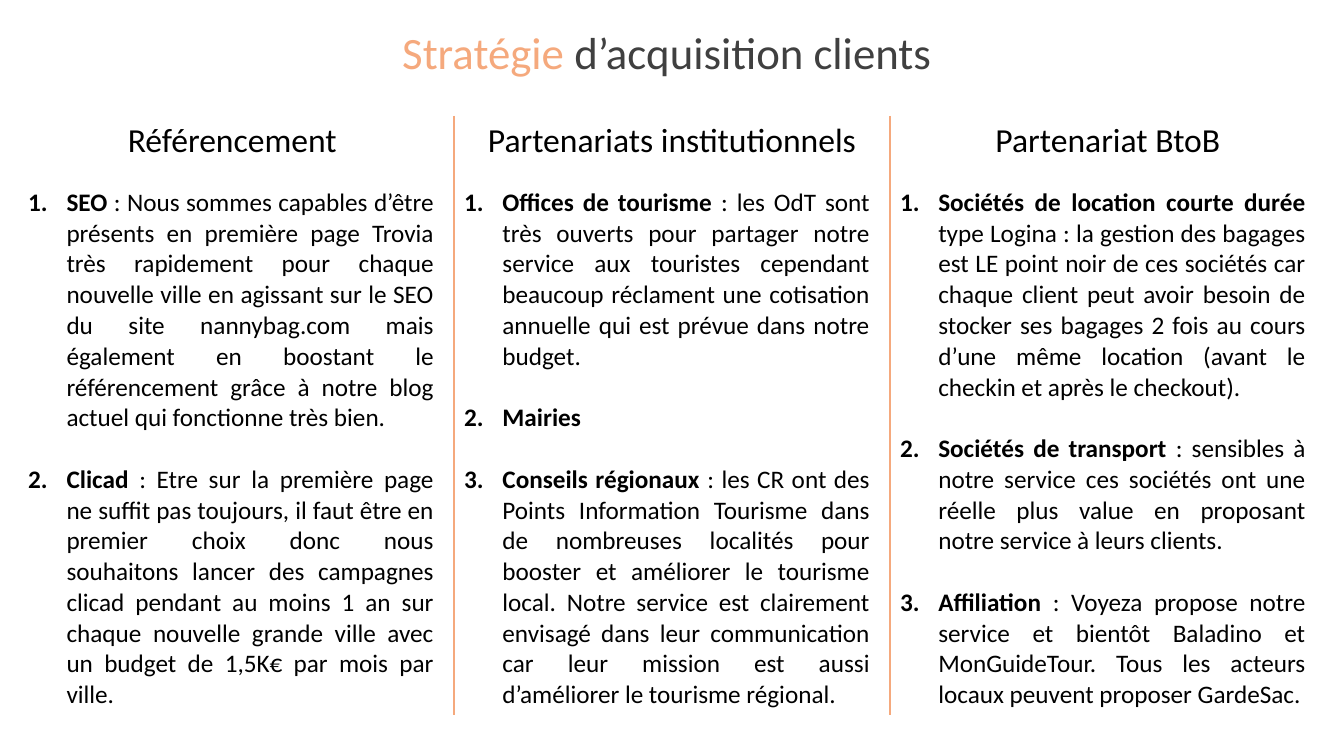
from lxml import etree
from pptx import Presentation
from pptx import util as u
from pptx.dml.color import RGBColor
from pptx.enum import text
from pptx.oxml import ns

PEACH = RGBColor(0xF5, 0xA9, 0x7D)
GREY = RGBColor(0x40, 0x40, 0x40)
BLACK = RGBColor(0, 0, 0)
PLAIN = "{2D5ABB26-0587-4C30-8999-92F81FD0307C}"

TITLE = [("Stratégie ", {"color": PEACH}), ("d’acquisition clients ", {"color": GREY})]
COLUMNS = [
    ("Référencement ", [
        ("SEO", " : Nous sommes capables d’être présents en première page Trovia très rapidement pour chaque nouvelle ville en agissant sur le SEO du site nannybag.com mais également en boostant le référencement grâce à notre blog actuel qui fonctionne très bien."),
        ("Clicad", " : Etre sur la première page ne suffit pas toujours, il faut être en premier choix donc nous souhaitons lancer des campagnes clicad pendant au moins 1 an sur chaque nouvelle grande ville avec un budget de 1,5K€ par mois par ville."),
    ]),
    ("Partenariats institutionnels", [
        ("Offices de tourisme ", ": les OdT sont très ouverts pour partager notre service aux touristes cependant beaucoup réclament une cotisation annuelle qui est prévue dans notre budget."),
        ("Mairies", ""),
        ("Conseils régionaux ", ": les CR ont des Points Information Tourisme dans de nombreuses localités pour booster et améliorer le tourisme local. Notre service est clairement envisagé dans leur communication car leur mission est aussi d’améliorer le tourisme régional."),
    ]),
    ("Partenariat BtoB", [
        ("Sociétés de location courte durée", " type Logina : la gestion des bagages est LE point noir de ces sociétés car chaque client peut avoir besoin de stocker ses bagages 2 fois au cours d’une même location (avant le checkin et après le checkout)."),
        ("Sociétés de transport ", ": sensibles à notre service ces sociétés ont une réelle plus value en proposant notre service à leurs clients."),
        ("Affiliation", " : Voyeza propose notre service et bientôt Baladino et MonGuideTour. Tous les acteurs locaux peuvent proposer GardeSac."),
    ]),
]


class Deck:
    font = "Calibri"

    def __init__(self):
        self.prs = Presentation()
        self.prs.slide_width = u.Inches(13.33)
        self.prs.slide_height = u.Inches(7.5)
        self.slide = self.prs.slides.add_slide(self.prs.slide_layouts[5])

    def apply(self, item, **values):
        for name, value in values.items():
            setattr(item, name, value)

    def fill_in(self, para, runs, size):
        for words, style in runs:
            run = para.add_run()
            run.text = words
            self.apply(run.font, name=self.font, size=u.Pt(size), bold=style.get("bold", False))
            run.font.color.rgb = style.get("color", BLACK)

    def title(self, runs, left, top, width, height):
        box = self.slide.shapes.title
        self.apply(box, left=u.Inches(left), top=u.Inches(top),
                   width=u.Inches(width), height=u.Inches(height))
        frame = box.text_frame
        self.apply(frame, word_wrap=True, vertical_anchor=text.MSO_ANCHOR.TOP,
                   auto_size=text.MSO_AUTO_SIZE.NONE)
        para = frame.paragraphs[0]
        para.alignment = text.PP_ALIGN.CENTER
        self.fill_in(para, runs, 32)

    def border(self, cell, sides):
        props = cell._tc.get_or_add_tcPr()
        for spot, side in enumerate(sides):
            line = etree.Element(ns.qn(f"a:ln{side}"), w=str(u.Pt(1)))
            fill = etree.SubElement(line, ns.qn("a:solidFill"))
            etree.SubElement(fill, ns.qn("a:srgbClr"), val=str(PEACH))
            props.insert(spot, line)

    def number(self, para):
        props = para._p.get_or_add_pPr()
        indent = u.Inches(0.38)
        props.set("marL", str(indent))
        props.set("indent", str(-indent))
        etree.SubElement(props, ns.qn("a:buFont"), typeface="+mj-lt")
        etree.SubElement(props, ns.qn("a:buAutoNum"), type="arabicPeriod")

    def points(self, cell, items):
        cell.margin_right = u.Inches(0.2)
        frame = cell.text_frame
        for index, (lead, rest) in enumerate(items):
            para = frame.add_paragraph() if index else frame.paragraphs[0]
            self.apply(para, alignment=text.PP_ALIGN.JUSTIFY,
                       space_before=u.Pt(22 if index else 0))
            self.number(para)
            runs = [(lead, {"bold": True})]
            if rest:
                runs.append((rest, {}))
            self.fill_in(para, runs, 18)

    def table(self, columns, left, top, width, heights):
        count = len(columns)
        shape = self.slide.shapes.add_table(
            len(heights), count, u.Inches(left), u.Inches(top),
            u.Inches(width), u.Inches(sum(heights)))
        grid = shape.table
        self.apply(grid, first_row=False, horz_banding=False)
        grid._tbl.tblPr.find(ns.qn("a:tableStyleId")).text = PLAIN
        for row, height in zip(grid.rows, heights):
            row.height = u.Inches(height)
        for col, (head, items) in enumerate(columns):
            top_cell, body = grid.cell(0, col), grid.cell(1, col)
            para = top_cell.text_frame.paragraphs[0]
            para.alignment = text.PP_ALIGN.CENTER
            self.fill_in(para, [(head, {})], 24)
            self.points(body, items)
            sides = ("L" if col else "") + ("R" if col < count - 1 else "")
            for cell in (top_cell, body):
                cell.fill.background()
                self.border(cell, sides)


def main():
    deck = Deck()
    deck.title(TITLE, 0, 0.19, 13.33, 0.64)
    deck.table(COLUMNS, 0.18, 1.15, 12.97, [0.66, 5.22])
    deck.prs.save("out.pptx")


if __name__ == "__main__":
    main()
